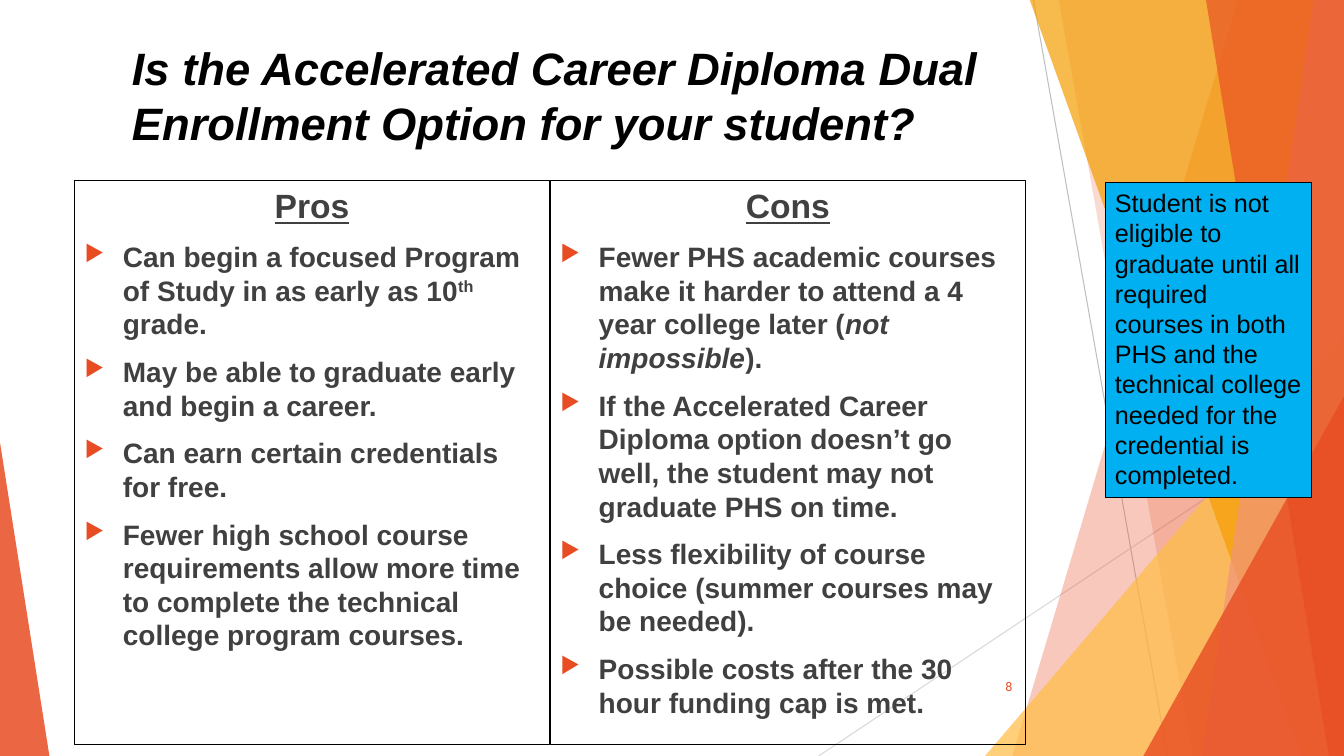
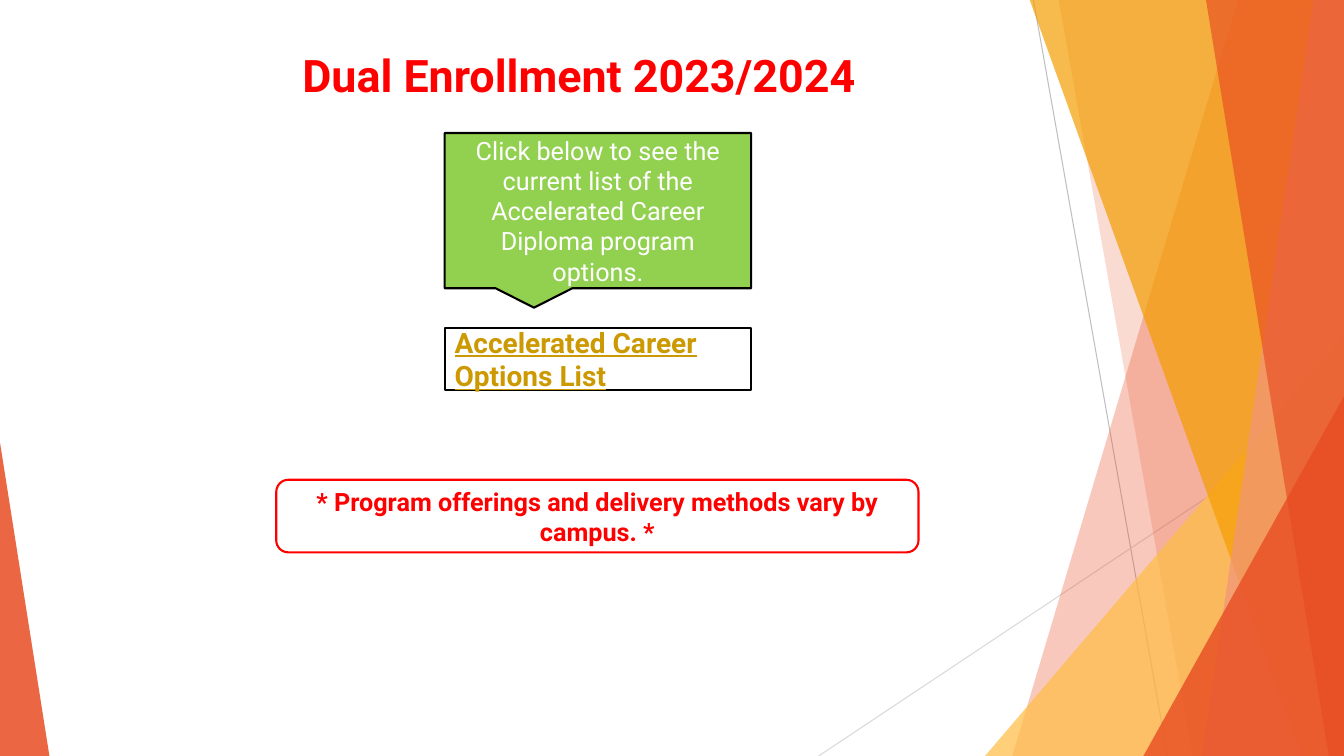
from lxml import etree
from pptx import Presentation
from pptx.dml.color import RGBColor
from pptx.enum.shapes import MSO_CONNECTOR, MSO_SHAPE
from pptx.enum.text import MSO_ANCHOR, PP_ALIGN
from pptx.oxml.ns import qn
from pptx.util import Inches, Pt

RECTANGLE = MSO_SHAPE.RECTANGLE
ROUNDED = MSO_SHAPE.ROUNDED_RECTANGLE
CALLOUT = MSO_SHAPE.RECTANGULAR_CALLOUT
TRIANGLE = MSO_SHAPE.ISOSCELES_TRIANGLE
STRAIGHT = MSO_CONNECTOR.STRAIGHT
TOP, MIDDLE = MSO_ANCHOR.TOP, MSO_ANCHOR.MIDDLE
LEFT, CENTER, RIGHT = PP_ALIGN.LEFT, PP_ALIGN.CENTER, PP_ALIGN.RIGHT

WIDTH, HEIGHT = 13.33, 7.5
BAND_TOP = -0.01
SANS, ROBOTO = "Arial", "Roboto"
COLORS = {
    "black": "000000", "white": "FFFFFF", "text": "404040", "red": "FF0000",
    "orange": "E84C22", "salmon": "F1947A", "amber": "F49D00", "gold": "FFBD47",
    "line": "BFBFBF", "pale line": "D9D9D9", "blue": "00B0F0",
    "green": "92D050", "link": "CC9900",
}

RULES = [((10.25, 0), (WIDTH, HEIGHT), "line"), ((WIDTH, 4.03), (8.12, HEIGHT), "pale line")]
RULES[0] = ((10.25, 0), (11.58, HEIGHT), "line")
# Bands reach the right edge: top-left x, bottom-left x, colour, opacity
BANDS_BEHIND = [(12.28, 10.04, "orange", 30), (10.5, 11.83, "orange", 20)]
BANDS_FRONT = [
    (10.21, 12.91, "amber", 70),
    (13.03, 11.92, "salmon", 70),
    (11.96, 13.18, "orange", 65),
]

PROS = [
    [("Can begin a focused Program of Study in as early as 10", {}),
     ("th", {"superscript": True}), (" grade.", {})],
    [("May be able to graduate early and begin a career.", {})],
    [("Can earn certain credentials for free.", {})],
    [("Fewer high school course requirements allow more time to complete "
      "the technical college program courses.", {})],
]
CONS = [
    [("Fewer PHS academic courses make it harder to attend a 4 year college later (", {}),
     ("not impossible", {"italic": True}), (").", {})],
    [("If the Accelerated Career Diploma option doesn’t go well, the student may "
      "not graduate PHS on time.", {})],
    [("Less flexibility of course choice (summer courses may be needed).", {})],
    [("Possible costs after the 30 hour funding cap is met.", {})],
]


def rgb(name):
    return RGBColor.from_string(COLORS[name])


def paint(shape, fill=None, line=None, weight=0.75, opacity=100):
    shape.shadow.inherit = False
    if fill:
        shape.fill.solid()
        shape.fill.fore_color.rgb = rgb(fill)
        if opacity < 100:
            color = shape.fill._xPr.find(".//" + qn("a:srgbClr"))
            etree.SubElement(color, qn("a:alpha"), val=str(opacity * 1000))
    else:
        shape.fill.background()
    if line:
        shape.line.color.rgb = rgb(line)
        shape.line.width = Pt(weight)
    else:
        shape.line.fill.background()


def add_rule(slide, start, end, color):
    rule = slide.shapes.add_connector(STRAIGHT, *map(Inches, start + end))
    rule.line.color.rgb = rgb(color)
    rule.line.width = Pt(0.75)
    etree.SubElement(rule._element.spPr, qn("a:effectLst"))


def add_band(slide, top_x, bottom_x, color, opacity):
    builder = slide.shapes.build_freeform(Inches(top_x), Inches(BAND_TOP))
    corners = [(WIDTH, BAND_TOP), (WIDTH, HEIGHT), (bottom_x, HEIGHT)]
    builder.add_line_segments([(Inches(x), Inches(y)) for x, y in corners], close=True)
    paint(builder.convert_to_shape(), color, opacity=opacity)


def add_wedge(slide, left, top, width, apex, color, opacity):
    """Triangle standing on the bottom edge, its apex at a share of its width."""
    wedge = slide.shapes.add_shape(
        TRIANGLE, *map(Inches, (left, top, width, HEIGHT - top)))
    wedge.adjustments[0] = apex
    paint(wedge, color, opacity=opacity)


def add_backdrop(slide):
    for rule in RULES:
        add_rule(slide, *rule)
    for band in BANDS_BEHIND:
        add_band(slide, *band)
    add_wedge(slide, 9.77, 3.33, 3.56, 1, "gold", 72)
    for band in BANDS_FRONT:
        add_band(slide, *band)
    add_wedge(slide, 11.34, 3.93, 1.99, 1, "orange", 80)
    add_wedge(slide, 0, 4.39, 0.49, 0, "orange", 85)


def add_span(para, text, size, color, font=SANS, bold=False, italic=False,
             underline=False, superscript=False):
    span = para.add_run()
    span.text = text
    span.font.name = font
    span.font.size = Pt(size)
    span.font.color.rgb = rgb(color)
    span.font.bold = bold
    span.font.italic = italic
    span.font.underline = underline
    if superscript:
        span.font._element.set("baseline", "30000")


def add_bullet(para):
    properties = para._p.get_or_add_pPr()
    properties.set("marL", str(Inches(0.38)))
    properties.set("indent", str(-Inches(0.38)))
    color = etree.SubElement(properties, qn("a:buClr"))
    etree.SubElement(color, qn("a:srgbClr"), val=COLORS["orange"])
    etree.SubElement(properties, qn("a:buSzPct"), val="80000")
    etree.SubElement(properties, qn("a:buChar"), char="▶")


def start_text(shape, align, anchor):
    """Prepare the text frame and return its first paragraph."""
    frame = shape.text_frame
    frame.word_wrap = True
    frame.vertical_anchor = anchor
    para = frame.paragraphs[0]
    para.alignment = align
    return para


def add_text(slide, at, text, align=LEFT, anchor=TOP, **style):
    box = slide.shapes.add_textbox(*map(Inches, at))
    para = start_text(box, align, anchor)
    add_span(para, text, **style)
    return para


def add_box(slide, at, text, preset=RECTANGLE, fill=None, line="black", weight=1.5,
            align=CENTER, anchor=MIDDLE, **style):
    box = slide.shapes.add_shape(preset, *map(Inches, at))
    paint(box, fill, line, weight)
    add_span(start_text(box, align, anchor), text, **style)
    return box


def add_column(slide, left, heading, points):
    box = add_box(slide, (left, 1.79, 4.71, 5.6), heading, weight=0.75, anchor=TOP,
                  size=24, color="text", bold=True, underline=True)
    for point in points:
        para = box.text_frame.add_paragraph()
        para.alignment = LEFT
        para.space_before = Pt(10)
        add_bullet(para)
        for text, style in point:
            add_span(para, text, 20, "text", bold=True, **style)


def add_slide(deck):
    slide = deck.slides.add_slide(deck.slide_layouts[6])
    add_backdrop(slide)
    return slide


def build_pros_and_cons(deck):
    slide = add_slide(deck)
    add_text(slide, (1.21, 0.35, 8.65, 1.44),
             "Is the Accelerated Career Diploma Dual Enrollment Option for your student?",
             size=32.4, color="black", bold=True, italic=True)
    add_column(slide, 0.74, "Pros", PROS)
    add_text(slide, (9.39, 6.61, 0.75, 0.4), "8", RIGHT, MIDDLE,
             size=9, color="orange", font=ROBOTO)
    add_column(slide, 5.46, "Cons", CONS)
    add_box(slide, (10.96, 1.81, 2.05, 3.13),
            "Student is not eligible to graduate until all required courses in both PHS "
            "and the technical college needed for the credential is completed.",
            fill="blue", weight=0.75, align=LEFT, anchor=TOP, size=18, color="black")


def build_program_list(deck):
    slide = add_slide(deck)
    add_box(slide, (2.74, 4.76, 6.37, 0.72),
            "* Program offerings and delivery methods vary by campus. *", ROUNDED,
            "white", "red", size=18, color="red", font=ROBOTO, bold=True)
    add_box(slide, (4.41, 1.32, 3.04, 1.54),
            "Click below to see the current list of the Accelerated Career Diploma "
            "program options.", CALLOUT, "green", size=18, color="white", font=ROBOTO)
    add_box(slide, (4.41, 3.25, 3.04, 0.62), "Accelerated Career Options List",
            fill="white", align=LEFT, size=20, color="link", font=ROBOTO,
            bold=True, underline=True)
    add_text(slide, (2.9, 0.42, 6.06, 0.64), "Dual Enrollment 2023/2024",
             size=32, color="red", font=ROBOTO, bold=True)


def main():
    deck = Presentation()
    deck.slide_width, deck.slide_height = Inches(WIDTH), Inches(HEIGHT)
    build_pros_and_cons(deck)
    build_program_list(deck)
    deck.save("out.pptx")


if __name__ == "__main__":
    main()
